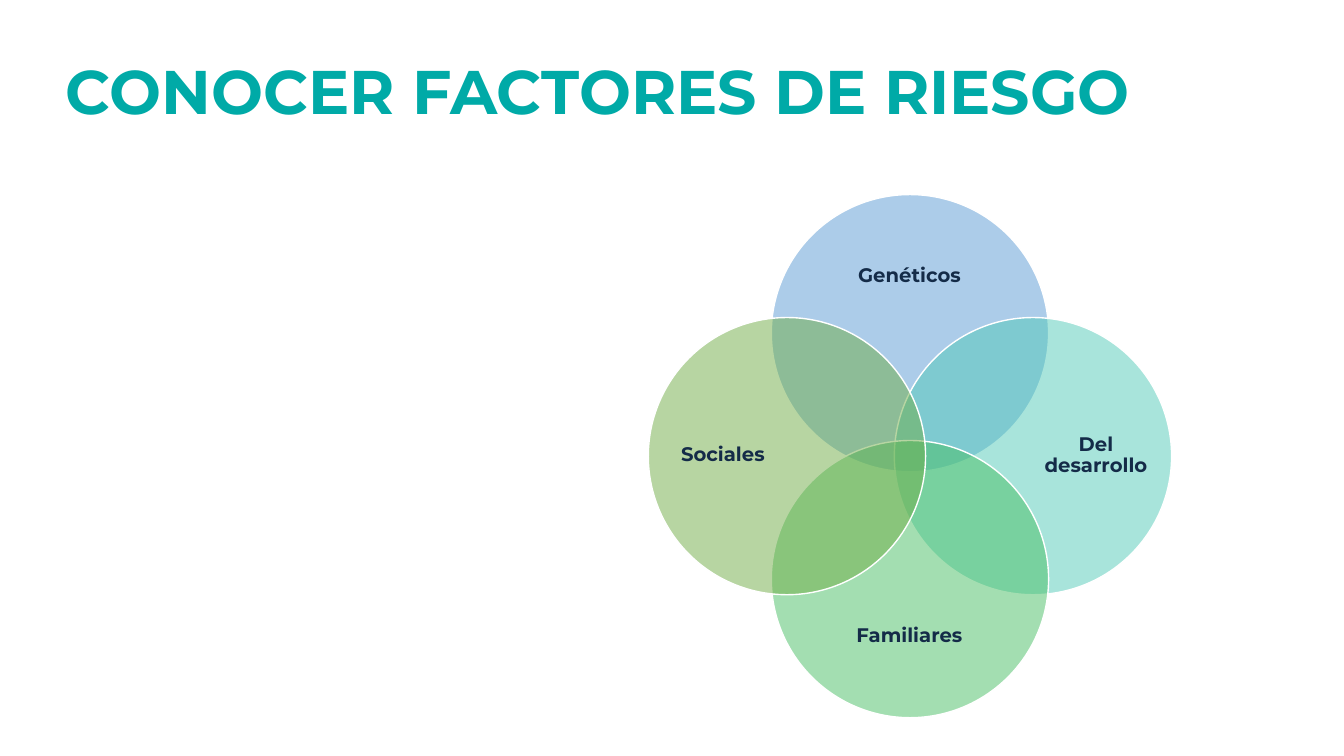
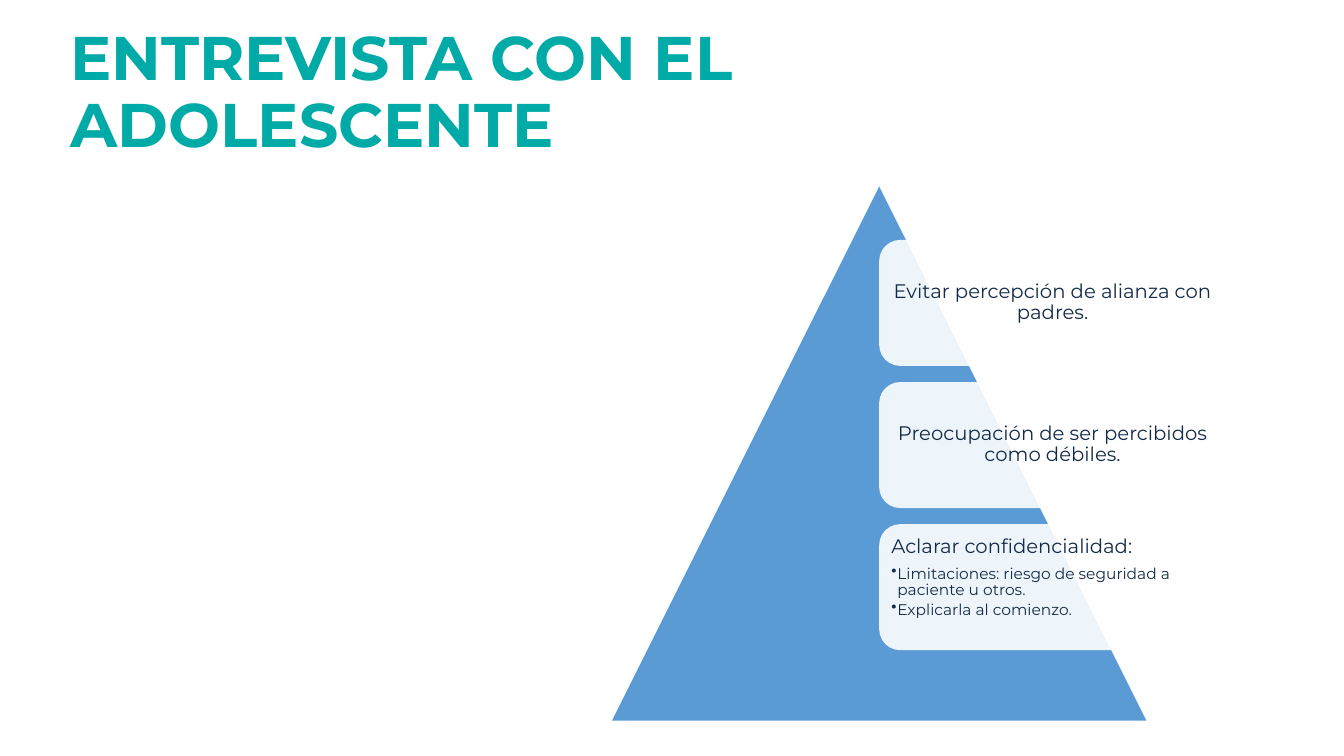
import pptx
import pptx.util
import pptx.dml.color
import pptx.enum.shapes
import pptx.enum.text
import pptx.oxml.ns
from lxml import etree

SHAPE = pptx.enum.shapes.MSO_SHAPE
ALIGN = pptx.enum.text.PP_ALIGN
ANCHOR = pptx.enum.text.MSO_ANCHOR
PX = 9144  # EMU in one px, 100 px to the inch

# Shared look
TEAL, NAVY, BLUE, WHITE = "00AAA7", "142B48", "5B9BD5", "FFFFFF"
TITLE = dict(size=44, bold=True, color=TEAL)
LABEL = dict(size=14, bold=True, color=NAVY)
BODY = dict(size=14, bold=False, color=NAVY)
DETAIL = dict(BODY, size=11)


def px(n):
    return pptx.util.Emu(n * PX)


def rgb(color):
    return pptx.dml.color.RGBColor.from_string(color)


def sub(parent, tag, **attrs):
    return etree.SubElement(parent, pptx.oxml.ns.qn(tag), attrs)


def add_shape(slide, kind, box, color, opacity=100, line=None):
    sp = slide.shapes.add_shape(kind, *map(px, box))
    sp.shadow.inherit = False
    sp.fill.solid()
    sp.fill.fore_color.rgb = rgb(color)
    if opacity < 100:
        clr = sp.fill._xPr.find(".//" + pptx.oxml.ns.qn("a:srgbClr"))
        sub(clr, "a:alpha", val=str(opacity * 1000))
    if line:
        sp.line.color.rgb = rgb(line)
        sp.line.width = pptx.util.Pt(1)
    else:
        sp.line.fill.background()
    return sp


def add_text(slide, box, text, style, align=ALIGN.CENTER, anchor=ANCHOR.MIDDLE, inset=(0, 0)):
    tf = slide.shapes.add_textbox(*map(px, box)).text_frame
    side, end = map(px, inset)
    frame = dict(word_wrap=True, vertical_anchor=anchor, margin_left=side,
                 margin_right=side, margin_top=end, margin_bottom=end)
    for name, value in frame.items():
        setattr(tf, name, value)
    add_run(tf.paragraphs[0], text, style, align)
    return tf


def add_run(p, text, style, align):
    p.alignment = align
    p.line_spacing = 0.9
    r = p.add_run()
    r.text = text
    font = dict(name="Montserrat", size=pptx.util.Pt(style["size"]), bold=style["bold"])
    for name, value in font.items():
        setattr(r.font, name, value)
    r.font.color.rgb = rgb(style["color"])


def add_bullet(tf, text):
    p = tf.add_paragraph()
    pPr = p._p.get_or_add_pPr()
    pPr.set("marL", str(px(6)))
    pPr.set("indent", str(px(-6)))
    sub(pPr, "a:buChar", char="•")
    p.space_after = pptx.util.Pt(2)
    add_run(p, text, DETAIL, ALIGN.LEFT)


def add_slide(prs, title, left):
    slide = prs.slides.add_slide(prs.slide_layouts[6])
    add_text(slide, (left, 21, 1150, 145), title, TITLE, ALIGN.LEFT, inset=(10, 5))
    return slide


def add_venn(slide, cx, cy, factors):
    size, shift = 275, 122
    for text, color, dx, dy in factors:
        left, top = cx + dx * shift - size // 2, cy + dy * shift - size // 2
        add_shape(slide, SHAPE.OVAL, (left, top, size, size), color, 50, WHITE)
        # Labels sit towards the outer edge of each circle
        w, h = (106, 212) if dx else (212, 87)
        x, y = cx + dx * 185, cy + dy * 179
        add_text(slide, (x - w // 2, y - h // 2, w, h), text, LABEL)


def add_pyramid(slide, items):
    add_shape(slide, SHAPE.ISOSCELES_TRIANGLE, (607, 185, 530, 530), BLUE)
    left, top, w, h, gap, pad = 872, 238, 344, 125, 16, 6
    for i, (text, bullets) in enumerate(items):
        y = top + i * (h + gap)
        add_shape(slide, SHAPE.ROUNDED_RECTANGLE, (left, y, w, h), WHITE, 90)
        align, anchor = (ALIGN.LEFT, ANCHOR.TOP) if bullets else (ALIGN.CENTER, ANCHOR.MIDDLE)
        tf = add_text(slide, (left + pad, y + pad, w - 2 * pad, h - 2 * pad),
                      text, BODY, align, anchor, (pad, pad))
        if bullets:
            tf.paragraphs[0].space_after = pptx.util.Pt(6)
        for bullet in bullets:
            add_bullet(tf, bullet)


def main():
    prs = pptx.Presentation()
    prs.slide_width, prs.slide_height = px(1333), px(750)

    # Risk factors
    slide = add_slide(prs, "CONOCER FACTORES DE RIESGO", 55)
    add_venn(slide, 902, 452, [
        ("Genéticos", BLUE, 0, -1),
        ("Del desarrollo", "52CAB8", 1, 0),
        ("Familiares", "49BF64", 0, 1),
        ("Sociales", "70AD47", -1, 0),
    ])

    # Interview
    slide = add_slide(prs, "ENTREVISTA CON EL ADOLESCENTE", 60)
    add_pyramid(slide, [
        ("Evitar percepción de alianza con padres.", []),
        ("Preocupación de ser percibidos como débiles.", []),
        ("Aclarar confidencialidad:", [
            "Limitaciones: riesgo de seguridad a paciente u otros.",
            "Explicarla al comienzo.",
        ]),
    ])
    prs.save("out.pptx")


if __name__ == "__main__":
    main()
